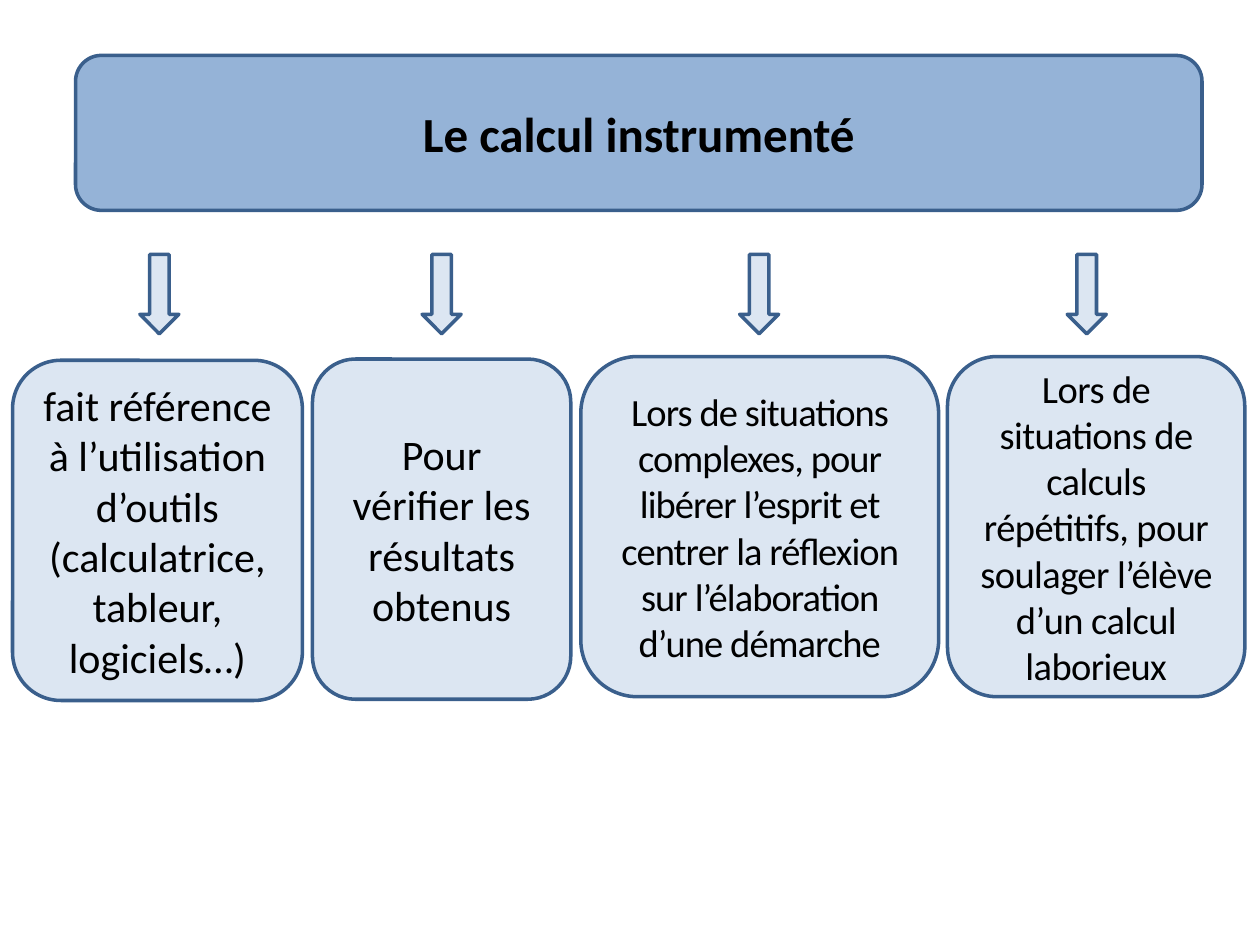
from pptx import Presentation
from pptx.dml.color import RGBColor
from pptx.enum import shapes, text
from pptx.util import Inches, Pt

COLORS = {"title": "95B3D7", "panel": "DCE6F2", "outline": "3A5F8C", "text": "000000"}

deck = Presentation()
deck.slide_width, deck.slide_height = Inches(10), Inches(7.5)
slide = deck.slides.add_slide(deck.slide_layouts[6])


def add_block(kind, left, top, width, height, fill):
    block = slide.shapes.add_shape(
        kind, Inches(left), Inches(top), Inches(width), Inches(height))
    block.shadow.inherit = False
    block.fill.solid()
    block.fill.fore_color.rgb = RGBColor.from_string(COLORS[fill])
    block.line.color.rgb = RGBColor.from_string(COLORS["outline"])
    block.line.width = Pt(2)
    return block


def write(block, wording, size, bold=False, spacing=0):
    frame = block.text_frame
    frame.word_wrap = True
    frame.vertical_anchor = text.MSO_ANCHOR.MIDDLE
    paragraph = frame.paragraphs[0]
    paragraph.alignment = text.PP_ALIGN.CENTER
    run = paragraph.add_run()
    run.text = wording
    paragraph.font.name = "Calibri"
    paragraph.font.size = Pt(size)
    paragraph.font.bold = bold
    paragraph.font.color.rgb = RGBColor.from_string(COLORS["text"])
    if spacing:
        run._r.get_or_add_rPr().set("spc", str(spacing))


ROUNDED = shapes.MSO_SHAPE.ROUNDED_RECTANGLE
title = add_block(ROUNDED, 0.6, 0.44, 8.94, 1.23, "title")
write(title, "Le calcul instrumenté", 28, bold=True)

uses = [
    (1.11, 0.1, 2.86, 2.3, 24, 0,
     "fait référence à l’utilisation d’outils (calculatrice, tableur, logiciels…)"),
    (3.35, 2.48, 2.85, 2.05, 24, 0,
     "Pour vérifier les résultats obtenus"),
    (5.87, 4.61, 2.83, 2.84, 22, -50,
     "Lors de situations complexes, pour libérer l’esprit et centrer la réflexion "
     "sur l’élaboration d’une démarche"),
    (8.47, 7.52, 2.83, 2.36, 22, -30,
     "Lors de situations de calculs répétitifs, pour soulager l’élève "
     "d’un calcul laborieux"),
]
for arrow_left, left, top, width, size, spacing, wording in uses:
    add_block(shapes.MSO_SHAPE.DOWN_ARROW, arrow_left, 2.02, 0.31, 0.63, "panel")
    use = add_block(ROUNDED, left, top, width, 2.7, "panel")
    write(use, wording, size, spacing=spacing)

deck.save("out.pptx")
